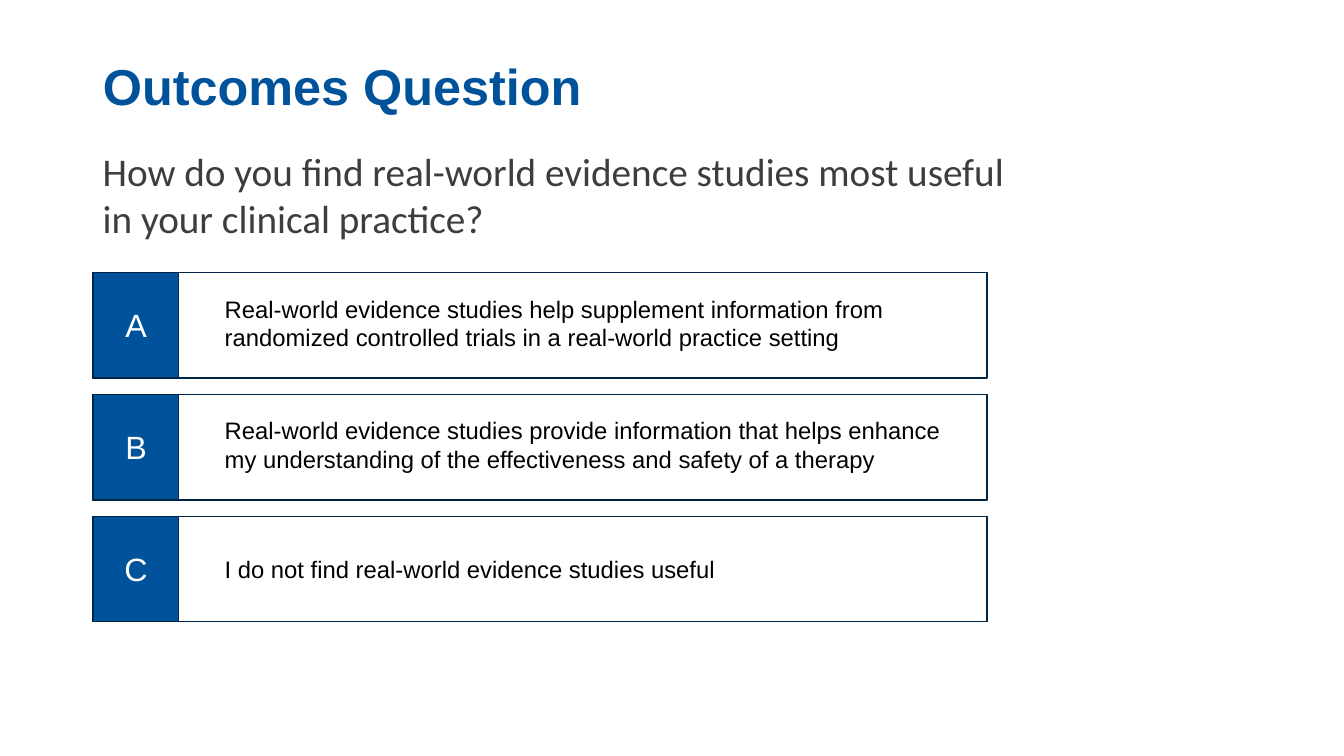
from pptx import Presentation
from pptx.dml.color import RGBColor
from pptx.enum.shapes import MSO_SHAPE
from pptx.enum.text import MSO_ANCHOR, PP_ALIGN
from pptx.util import Emu, Pt

RECT = MSO_SHAPE.RECTANGLE
TOP, MIDDLE, BOTTOM = MSO_ANCHOR.TOP, MSO_ANCHOR.MIDDLE, MSO_ANCHOR.BOTTOM
LEFT, CENTER = PP_ALIGN.LEFT, PP_ALIGN.CENTER

BLUE = RGBColor(0x00, 0x53, 0x9B)
NAVY = RGBColor(0x00, 0x24, 0x44)
GRAY = RGBColor(0x3D, 0x3D, 0x3D)
WHITE = RGBColor(0xFF, 0xFF, 0xFF)
BLACK = RGBColor(0x00, 0x00, 0x00)

SCALE = 9144  # EMU in one px, 100 px to the inch

STYLES = {
    "title": (BLUE, {"name": "Arial", "size": Pt(36), "bold": True}),
    "query": (GRAY, {"name": "Calibri", "size": Pt(28)}),
    "letter": (WHITE, {"name": "Arial", "size": Pt(23)}),
    "answer": (BLACK, {"name": "Arial", "size": Pt(17)}),
}

# Answer text, offset from the top of its row, text height
ANSWERS = [
    ("Real-world evidence studies help supplement information from "
     "randomized controlled trials in a real-world practice setting", 17, 67),
    ("Real-world evidence studies provide information that helps enhance "
     "my understanding of the effectiveness and safety of a therapy", 17, 67),
    ("I do not find real-world evidence studies useful", 33, 39),
]
ROW_TOP, ROW_STEP, ROW_TALL = 270, 121, 105


def px(*values):
    return [Emu(value * SCALE) for value in values]


class Board:
    def __init__(self, deck):
        self.slide = deck.slides.add_slide(deck.slide_layouts[5])
        self.shapes = self.slide.shapes

    def label(self, shape, text, style, anchor=TOP, align=LEFT):
        frame = shape.text_frame
        frame.word_wrap = True
        frame.vertical_anchor = anchor
        para = frame.paragraphs[0]
        para.text = text
        para.alignment = align
        color, values = STYLES[style]
        for run in para.runs:
            for key, value in values.items():
                setattr(run.font, key, value)
            run.font.color.rgb = color
        return para

    def title(self, text, *box):
        shape = self.shapes.title
        shape.left, shape.top, shape.width, shape.height = px(*box)
        para = self.label(shape, text, "title", BOTTOM)
        para.line_spacing = 0.9

    def text(self, text, style, *box):
        self.label(self.shapes.add_textbox(*px(*box)), text, style)

    def rect(self, fill, *box):
        shape = self.shapes.add_shape(RECT, *px(*box))
        shape.shadow.inherit = False
        shape.fill.solid()
        shape.fill.fore_color.rgb = fill
        shape.line.color.rgb = NAVY
        shape.line.width = Pt(0.85)
        return shape


def main():
    deck = Presentation()
    deck.slide_width, deck.slide_height = px(1333, 750)
    board = Board(deck)

    # Heading and question
    board.title("Outcomes Question", 92, 0, 1150, 121)
    board.text("How do you find real-world evidence studies most useful \v"
               "in your clinical practice?", "query", 92, 141, 1150, 535)

    # Lettered answers
    for row, (answer, drop, tall) in enumerate(ANSWERS):
        top = ROW_TOP + row * ROW_STEP
        board.rect(WHITE, 92, top, 887, ROW_TALL)
        tile = board.rect(BLUE, 93, top, 84, ROW_TALL)
        board.label(tile, "ABC"[row], "letter", MIDDLE, CENTER)
        board.text(answer, "answer", 213, top + drop, 765, tall)

    deck.save("out.pptx")


if __name__ == "__main__":
    main()
